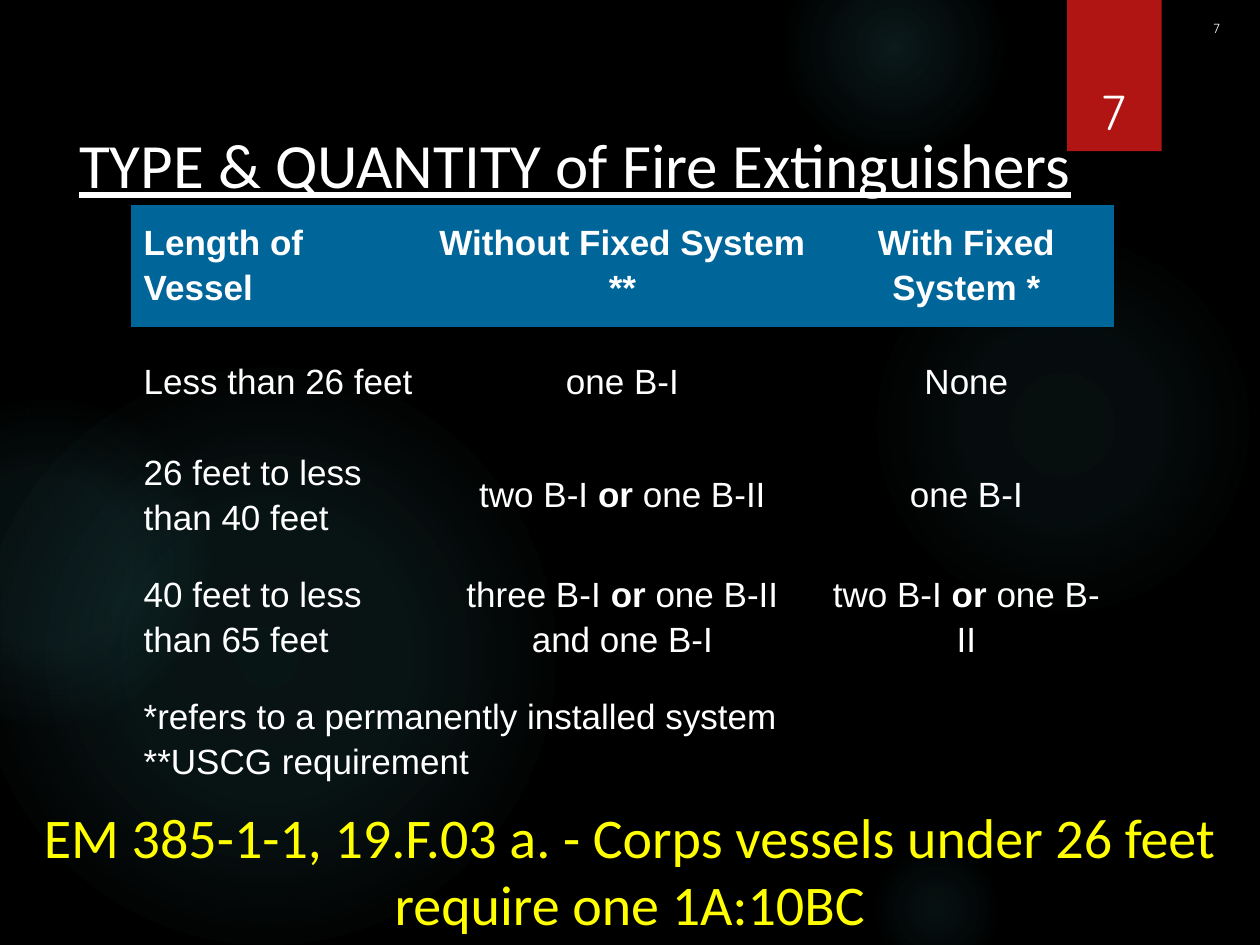
from lxml.etree import SubElement
from pptx import Presentation
from pptx.dml.color import RGBColor
from pptx.enum.shapes import MSO_SHAPE
from pptx.enum.text import MSO_ANCHOR, PP_ALIGN
from pptx.oxml.ns import qn
from pptx.util import Inches, Pt

WHITE, BLACK, RED, BLUE, YELLOW, TEAL = (
    "FFFFFF", "000000", "B01513", "006699", "FFFF00", "50B9C1")
NO_GRID_STYLE = "{2D5ABB26-0587-4C30-8999-92F81FD0307C}"
LEFT, CENTER, RIGHT = PP_ALIGN.LEFT, PP_ALIGN.CENTER, PP_ALIGN.RIGHT

# left, top, diameter, gradient stops as (position %, opacity %)
GLOWS = [
    (6.89, 1.83, 3.08, [(0, 7), (36, 6), (69, 0)]),
    (6.22, -0.5, 1.75, [(0, 14), (36, 7), (73, 0)]),
    (6.89, 6.67, 1.08, [(0, 9), (36, 5), (66, 0)]),
    (-0.17, 2.92, 4.58, [(0, 11), (36, 10), (75, 0)]),
    (-0.92, 3.17, 2.58, [(0, 8), (36, 8), (72, 0)]),
]

# box, text, font, size, colour, alignment, anchor, vertical inset, underline
TEXTS = [
    ((9.15, 0.16, 0.63, 0.13), "7", "Quicksand", 7.5, WHITE, RIGHT, MSO_ANCHOR.TOP, 0, False),
    ((8.49, 0.32, 0.69, 0.84), "7", "Quicksand", 28, WHITE, CENTER, MSO_ANCHOR.BOTTOM, 0.05, False),
    ((0.53, 0.95, 9.01, 0.71), "TYPE & QUANTITY of Fire Extinguishers",
     "Calibri", 36, WHITE, LEFT, MSO_ANCHOR.TOP, 0.05, True),
    ((0, 6.32, 10, 1.18),
     "EM 385-1-1, 19.F.03 a. - Corps vessels under 26 feet require one 1A:10BC",
     "Calibri", 32, YELLOW, CENTER, MSO_ANCHOR.TOP, 0.05, False),
]

# The word between bars is bold
ROWS = [
    ["Length of Vessel", "Without Fixed System **", "With Fixed System *"],
    ["Less than 26 feet", "one B-I", "None"],
    ["26 feet to less than 40 feet", "two B-I |or| one B-II", "one B-I"],
    ["40 feet to less than 65 feet", "three B-I |or| one B-II and one B-I",
     "two B-I |or| one B-II"],
    ["*refers to a permanently installed system\n**USCG requirement"],
]
COLUMN_WIDTHS = [2.34, 3.12, 2.34]
ROW_HEIGHTS = [0.93, 0.83, 0.93, 0.93, 0.93]


def color(value):
    return RGBColor.from_string(value)


def style(font, name, size, value):
    font.name, font.size, font.color.rgb = name, Pt(size), color(value)


def add_shape(page, kind, box):
    shape = page.shapes.add_shape(kind, *map(Inches, box))
    shape.shadow.inherit = False
    shape.line.fill.background()
    return shape


def add_glow(page, left, top, size, stops):
    """Add a circle whose radial gradient fades out."""
    glow = add_shape(page, MSO_SHAPE.OVAL, (left, top, size, size))
    glow.fill.gradient()
    gradient = glow.element.spPr.find(qn("a:gradFill"))
    for child in list(gradient):
        gradient.remove(child)
    stop_list = SubElement(gradient, qn("a:gsLst"))
    for position, opacity in stops:
        stop = SubElement(stop_list, qn("a:gs"), pos=str(position * 1000))
        tint = SubElement(stop, qn("a:srgbClr"), val=TEAL)
        SubElement(tint, qn("a:alpha"), val=str(opacity * 1000))
    radial = SubElement(gradient, qn("a:path"), attrib={"path": "circle"})
    SubElement(radial, qn("a:fillToRect"), {side: "50000" for side in "ltrb"})


def add_text(page, box, text, name, size, value, align, anchor, inset, underline):
    frame = page.shapes.add_textbox(*map(Inches, box)).text_frame
    frame.word_wrap = True
    frame.vertical_anchor = anchor
    frame.margin_top = frame.margin_bottom = Inches(inset)
    frame.text = text
    para = frame.paragraphs[0]
    para.alignment = align
    span = para.runs[0]
    style(span.font, name, size, value)
    span.font.underline = underline


def fill_cell(cell, text, header, align):
    cell.margin_left = cell.margin_right = Inches(0.1)
    cell.margin_top = cell.margin_bottom = Inches(0.1)
    cell.vertical_anchor = MSO_ANCHOR.TOP if header else MSO_ANCHOR.MIDDLE
    if header:
        cell.fill.solid()
        cell.fill.fore_color.rgb = color(BLUE)
    else:
        cell.fill.background()
    frame = cell.text_frame
    for number, line in enumerate(text.split("\n")):
        para = frame.add_paragraph() if number else frame.paragraphs[0]
        para.alignment, para.line_spacing = align, 1.15
        for index, part in enumerate(line.split("|")):
            span = para.add_run()
            span.text = part
            style(span.font, "Arial", 20, WHITE)
            span.font.bold = header or index % 2 == 1


def add_requirements(page):
    frame = page.shapes.add_table(
        len(ROWS), len(COLUMN_WIDTHS), Inches(1.04), Inches(1.63),
        Inches(sum(COLUMN_WIDTHS)), Inches(sum(ROW_HEIGHTS)))
    table = frame.table
    table.horz_banding = False
    frame.element.find(".//" + qn("a:tableStyleId")).text = NO_GRID_STYLE
    for column, width in zip(table.columns, COLUMN_WIDTHS):
        column.width = Inches(width)
    for row, height in zip(table.rows, ROW_HEIGHTS):
        row.height = Inches(height)
    last = len(ROWS) - 1
    table.cell(last, 0).merge(table.cell(last, len(COLUMN_WIDTHS) - 1))
    for row, texts in enumerate(ROWS):
        for column, text in enumerate(texts):
            fill_cell(table.cell(row, column), text, row == 0, CENTER if column else LEFT)


def main():
    deck = Presentation()
    deck.slide_width, deck.slide_height = Inches(10), Inches(7.5)
    page = deck.slides.add_slide(deck.slide_layouts[6])
    page.background.fill.solid()
    page.background.fill.fore_color.rgb = color(BLACK)
    for glow in GLOWS:
        add_glow(page, *glow)
    ribbon = add_shape(page, MSO_SHAPE.RECTANGLE, (8.47, 0, 0.75, 1.2))
    ribbon.fill.solid()
    ribbon.fill.fore_color.rgb = color(RED)
    *upper, footer = TEXTS
    for text in upper:
        add_text(page, *text)
    add_requirements(page)
    add_text(page, *footer)
    deck.save("out.pptx")


if __name__ == "__main__":
    main()
